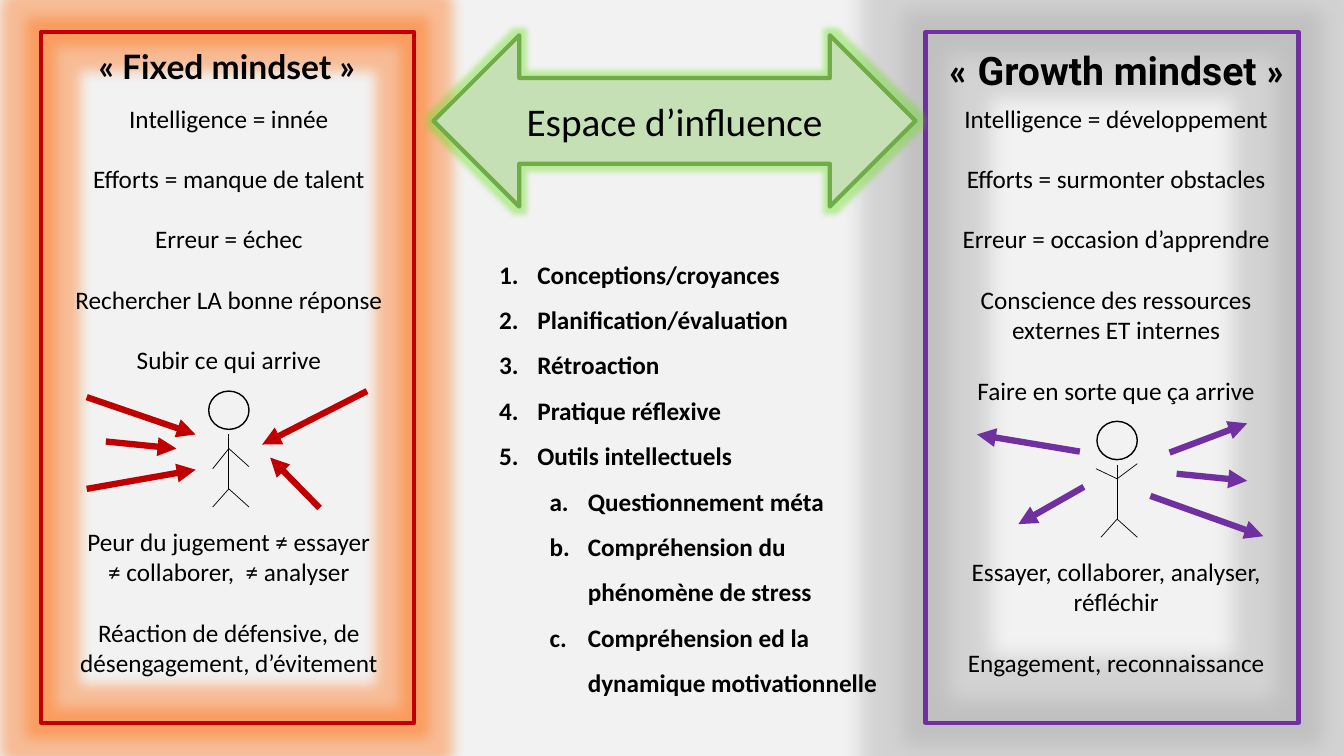
from lxml.etree import SubElement
from pptx import Presentation
from pptx.dml.color import RGBColor
from pptx.enum.shapes import MSO_CONNECTOR, MSO_SHAPE
from pptx.enum.text import MSO_ANCHOR, MSO_AUTO_SIZE, PP_ALIGN
from pptx.oxml.ns import qn
from pptx.util import Inches, Pt

COLORS = {
    "background": "F2F2F2", "text": "000000",
    "fixed": "C00000", "fixed glow": "FF6D0D",
    "growth": "7030A0", "growth glow": "A5A5A5",
    "arrow": "C5E0B4", "arrow edge": "70AD47", "arrow glow": "66E01A",
}

# Content: (text, blank lines' worth of space above)
FIXED = [
    ("Intelligence = innée", 0),
    ("Efforts = manque de talent", 1),
    ("Erreur = échec", 1),
    ("Rechercher LA bonne réponse", 1),
    ("Subir ce qui arrive", 1),
    ("Peur du jugement ≠ essayer", 5),
    ("≠ collaborer,  ≠ analyser", 0),
    ("Réaction de défensive, de désengagement, d’évitement", 1),
]
GROWTH = [
    ("Intelligence = développement", 0),
    ("Efforts = surmonter obstacles", 1),
    ("Erreur = occasion d’apprendre", 1),
    ("Conscience des ressources externes ET internes", 1),
    ("Faire en sorte que ça arrive", 1),
    ("Essayer, collaborer, analyser, réfléchir", 5),
    ("Engagement, reconnaissance", 1),
]
# (text, level)
LEVERS = [
    ("Conceptions/croyances", 0),
    ("Planification/évaluation", 0),
    ("Rétroaction", 0),
    ("Pratique réflexive", 0),
    ("Outils intellectuels", 0),
    ("Questionnement méta", 1),
    ("Compréhension du phénomène de stress", 1),
    ("Compréhension ed la dynamique motivationnelle", 1),
]
# Headings as (text, font) spans
FIXED_HEADING = [("« Fixed mindset »", "Lato")]
GROWTH_HEADING = [("« ", "Calibri"), ("Growth mindset", "Roboto"), (" »", "Calibri")]

# Arrows as (from x, from y, to x, to y)
INWARD = [
    (0.86, 3.94, 1.94, 4.31), (0.86, 4.85, 1.94, 4.66), (3.64, 3.88, 2.6, 4.41),
    (3.17, 5.04, 2.68, 4.54), (1.05, 4.38, 1.75, 4.45),
]
OUTWARD = [
    (11.6, 4.49, 12.37, 4.2), (11.41, 4.92, 12.53, 5.32), (11.67, 4.7, 12.37, 4.77),
    (10.71, 4.48, 9.69, 4.31), (10.75, 4.83, 10.1, 5.2),
]
# Figures: top of head, then hand positions relative to it
LOWERED_ARMS = [(0.2, 0.75), (-0.16, 0.77)]
RAISED_ARMS = [(0.2, 0.42), (-0.21, 0.47)]

LINE_HEIGHT = 21.6
NUMBERING = ("arabicPeriod", "alphaLcPeriod")


def color(name):
    return RGBColor.from_string(COLORS[name])


def place(shape, left, top, width, height):
    shape.left, shape.top = Inches(left), Inches(top)
    shape.width, shape.height = Inches(width), Inches(height)


def write(para, spans, size=18, bold=False, align=PP_ALIGN.CENTER,
          before=0, spacing=1.0, level=None):
    """Fill a paragraph with (text, font) spans; a level makes it numbered."""
    para.alignment = align
    para.space_before, para.space_after = Pt(before), Pt(0)
    para.line_spacing = spacing
    para.level = level or 0
    for text, font in spans:
        span = para.add_run()
        span.text = text
        span.font.name, span.font.size, span.font.bold = font, Pt(size), bold
        span.font.color.rgb = color("text")
    properties = para._p.get_or_add_pPr()
    if level is None:
        properties.set("marL", "0")
        properties.set("indent", "0")
        SubElement(properties, qn("a:buNone"))
    else:
        properties.set("marL", str(Inches(0.38 + 0.5 * level)))
        properties.set("indent", str(-Inches(0.38)))
        SubElement(properties, qn("a:buFont"), typeface="+mj-lt")
        SubElement(properties, qn("a:buAutoNum"), type=NUMBERING[level])


def fill_box(box, paragraphs, wrap=True, anchor=MSO_ANCHOR.TOP):
    """Write (spans, format) pairs into a box, one paragraph each."""
    frame = box.text_frame
    frame.word_wrap, frame.auto_size = wrap, MSO_AUTO_SIZE.NONE
    frame.vertical_anchor = anchor
    for index, (spans, options) in enumerate(paragraphs):
        para = frame.add_paragraph() if index else frame.paragraphs[0]
        write(para, spans, **options)


def add_outline(shapes, kind, at, edge, width, fill=None, glow=None, radius=0):
    shape = shapes.add_shape(kind, *map(Inches, at))
    shape.shadow.inherit = False
    if fill:
        shape.fill.solid()
        shape.fill.fore_color.rgb = color(fill)
    else:
        shape.fill.background()
    shape.line.color.rgb = color(edge)
    shape.line.width = Pt(width)
    if glow:
        effects = shape._element.spPr.find(qn("a:effectLst"))
        halo = SubElement(effects, qn("a:glow"), rad=str(Pt(radius)))
        tint = SubElement(halo, qn("a:srgbClr"), val=COLORS[glow])
        SubElement(tint, qn("a:alpha"), val="40000")
    return shape


def add_line(shapes, ends, edge, width, arrow=False):
    line = shapes.add_connector(MSO_CONNECTOR.STRAIGHT, *map(Inches, ends))
    line.line.color.rgb = color(edge)
    line.line.width = Pt(width)
    if arrow:
        SubElement(line.line._get_or_add_ln(), qn("a:tailEnd"), type="triangle")
    SubElement(line._element.spPr, qn("a:effectLst"))


def add_figure(page, x, y, hands):
    shapes = page.shapes.add_group_shape().shapes
    add_outline(shapes, MSO_SHAPE.OVAL, (x - 0.2, y, 0.4, 0.38), "text", 1)
    shoulder, hip = 0.57, 0.97
    limbs = [(0.43, 0, hip), (hip, 0.2, 1.15), (hip, -0.16, 1.15)]
    limbs += [(shoulder, *hand) for hand in hands]
    for start, across, down in limbs:
        add_line(shapes, (x, y + start, x + across, y + down), "text", 0.5)


deck = Presentation()
deck.slide_width, deck.slide_height = Inches(13.33), Inches(7.5)
page = deck.slides.add_slide(deck.slide_layouts.get_by_name("Comparison"))
page.background.fill.solid()
page.background.fill.fore_color.rgb = color("background")
holders = {holder.placeholder_format.idx: holder for holder in page.placeholders}
title, levers, fixed_list, growth_list = (holders[idx] for idx in (0, 1, 2, 4))
holders[3]._element.getparent().remove(holders[3]._element)

# Two mindset panels: frame, heading, statements, arrows and figure
panels = [
    ("fixed", 0.41, 18, FIXED_HEADING, 24, (0.4, 0.41, 3.7, 0.5), fixed_list, 0.54,
     FIXED, INWARD, (2.27, 3.88, LOWERED_ARMS)),
    ("growth", 9.18, 30, GROWTH_HEADING, 28, (9.22, 0.41, 3.72, 0.57), growth_list, 9.34,
     GROWTH, OUTWARD, (11.08, 4.18, RAISED_ARMS)),
]
for (name, left, radius, heading, size, heading_at, column, column_left,
     statements, arrows, figure) in panels:
    add_outline(page.shapes, MSO_SHAPE.RECTANGLE, (left, 0.32, 3.7, 6.85), name, 3,
                glow=name + " glow", radius=radius)
    box = page.shapes.add_textbox(*map(Inches, heading_at))
    fill_box(box, [(heading, {"size": size, "bold": True})], wrap=False)
    place(column, column_left, 0.97, 3.46, 5.86)
    fill_box(column, [([(text, "Calibri")], {"before": gap * LINE_HEIGHT})
                      for text, gap in statements])
    for ends in arrows:
        add_line(page.shapes, ends, name, 4.5, arrow=True)
    add_figure(page, *figure)

# Central double arrow with the title over it
arrow_at = (4.3, 0.35, 4.78, 1.7)
add_outline(page.shapes, MSO_SHAPE.LEFT_RIGHT_ARROW, arrow_at, "arrow edge", 3,
            fill="arrow", glow="arrow glow", radius=8)
place(title, *arrow_at)
fill_box(title, [([("Espace d’influence", "Calibri")], {"size": 28})],
         anchor=MSO_ANCHOR.MIDDLE)

# Numbered levers
place(levers, 4.85, 2.37, 4, 4.6)
fill_box(levers, [([(text, "Calibri")], {"bold": True, "align": PP_ALIGN.LEFT,
                                         "spacing": 1.5, "level": level})
                  for text, level in LEVERS])

# Bring the text in front of the frames and the arrow
for holder in (fixed_list, growth_list, title, levers):
    page.shapes._spTree.append(holder._element)

deck.save("out.pptx")
